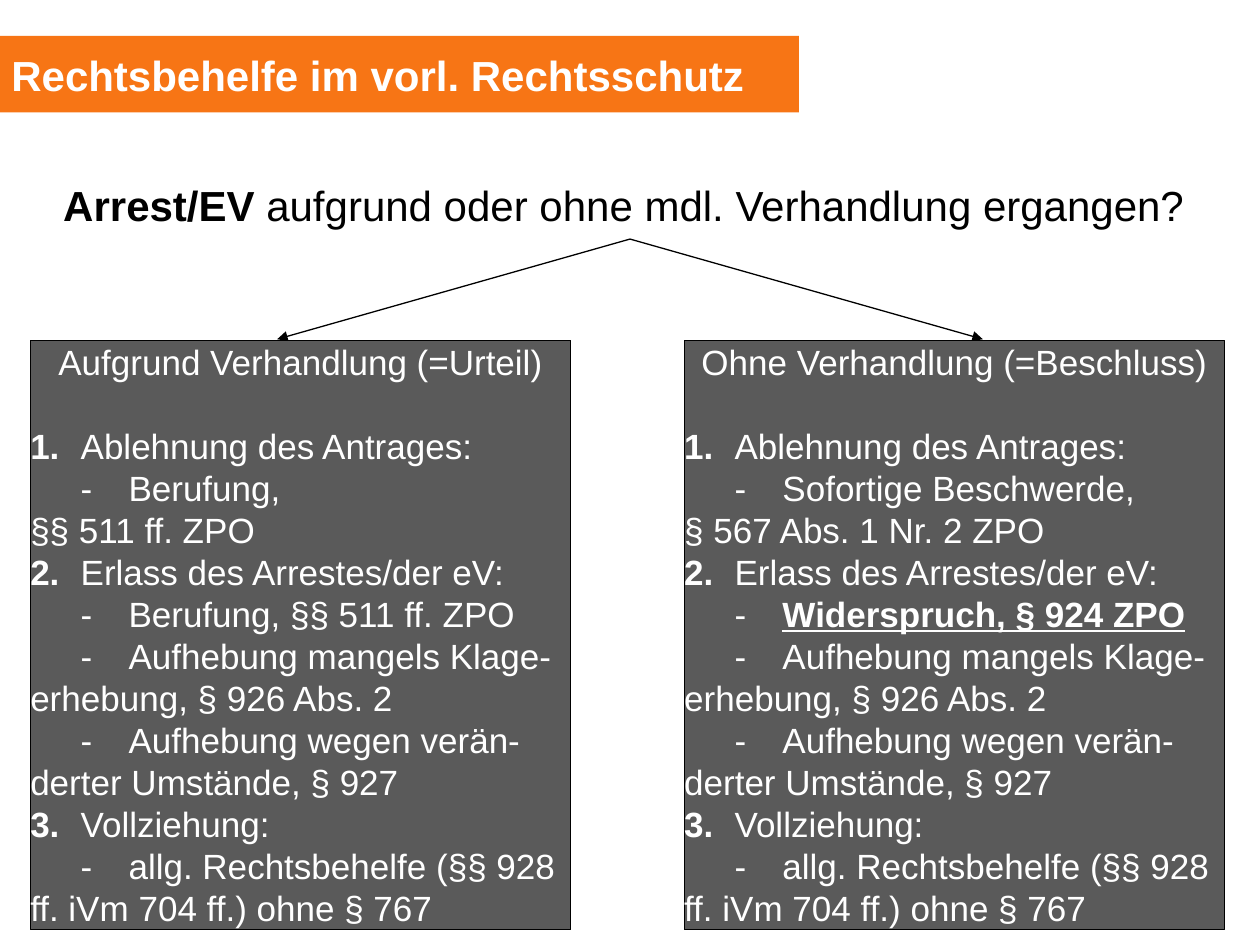
from lxml.etree import SubElement
from pptx import Presentation
from pptx.dml.color import RGBColor
from pptx.enum.shapes import MSO_CONNECTOR, MSO_SHAPE
from pptx.enum.text import MSO_ANCHOR, PP_ALIGN
from pptx.oxml.ns import qn
from pptx.util import Inches, Pt

HUES = {"ink": "000000", "paper": "FFFFFF", "panel": "5A5A5A", "bar": "F77515"}
WIDE, HIGH = 10, 7.5
TABS = (0.4, 0.78)


class Deck:
    font = "Arial"
    lead = 1.2  # line height as a multiple of the text size

    def __init__(self):
        self.prs = Presentation()
        self.prs.slide_width, self.prs.slide_height = Inches(WIDE), Inches(HIGH)
        self.slide = self.prs.slides.add_slide(self.prs.slide_layouts[6])

    def place(self, *shares):
        """Turn shares of the slide's size into lengths, x and y in turn."""
        return [Inches(s * (HIGH if i % 2 else WIDE)) for i, s in enumerate(shares)]

    def hue(self, name):
        return RGBColor.from_string(HUES[name])

    def fill_text(self, shape, paras, size, hue, align=PP_ALIGN.LEFT, inset=0):
        frame = shape.text_frame
        frame.word_wrap = True
        frame.margin_left = Inches(inset)
        frame.margin_top = frame.margin_right = frame.margin_bottom = 0
        for i, runs in enumerate(paras):
            para = frame.add_paragraph() if i else frame.paragraphs[0]
            para.alignment = align
            para.line_spacing = Pt(size * self.lead)
            for text, style in runs:
                for j, line in enumerate(text.split("\n")):
                    if j:
                        para.add_line_break()
                    run = para.add_run()
                    run.text = line
                    font = run.font
                    font.name, font.size = self.font, Pt(size)
                    font.color.rgb = self.hue(hue)
                    font.bold = "b" in style
                    font.underline = "u" in style
        return frame

    def label(self, at, runs, size):
        box = self.slide.shapes.add_textbox(*self.place(*at))
        self.fill_text(box, [runs], size, "ink", PP_ALIGN.CENTER)

    def block(self, at, fill, edge=None):
        box = self.slide.shapes.add_shape(MSO_SHAPE.RECTANGLE, *self.place(*at))
        box.shadow.inherit = False
        box.fill.solid()
        box.fill.fore_color.rgb = self.hue(fill)
        if edge:
            box.line.color.rgb = self.hue(edge)
            box.line.width = Pt(0.75)
        else:
            box.line.fill.background()
        return box

    def title(self, at, text):
        box = self.block(at, "bar")
        frame = self.fill_text(box, [[(text, "b")]], 24, "paper", inset=0.09)
        frame.vertical_anchor = MSO_ANCHOR.MIDDLE

    def panel(self, at, head, rows):
        box = self.block(at, "panel", "ink")
        frame = self.fill_text(box, [[(head, "")]] + rows, 20, "paper")
        frame.vertical_anchor = MSO_ANCHOR.TOP
        first, *rest = frame.paragraphs
        first.alignment = PP_ALIGN.CENTER
        first.space_after = Pt(20 * self.lead)
        for para in rest:
            stops = SubElement(para._p.get_or_add_pPr(), qn("a:tabLst"))
            for tab in TABS:
                SubElement(stops, qn("a:tab"), pos=str(Inches(tab)), algn="l")

    def arrow(self, *ends):
        line = self.slide.shapes.add_connector(
            MSO_CONNECTOR.STRAIGHT, *self.place(*ends))
        line.line.color.rgb = self.hue("ink")
        line.line.width = Pt(0.75)
        SubElement(line.line._get_or_add_ln(), qn("a:tailEnd"), type="triangle")
        SubElement(line._element.spPr, qn("a:effectLst"))


def point(num, text):
    return [(f"{num}.\t", "b"), (text, "")]


def dash(text, style=""):
    return [("\t-\t", ""), (text, style)]


def rows(appeal, remedy):
    """The list of remedies, which differs in two entries only."""
    return [
        point(1, "Ablehnung des Antrages:"),
        dash(appeal),
        point(2, "Erlass des Arrestes/der eV:"),
        remedy,
        dash("Aufhebung mangels Klage-\nerhebung, § 926 Abs. 2"),
        dash("Aufhebung wegen verän-\nderter Umstände, § 927"),
        point(3, "Vollziehung:"),
        dash("allg. Rechtsbehelfe (§§ 928\nff. iVm 704 ff.) ohne § 767"),
    ]


def main():
    deck = Deck()

    # Question
    deck.label((0.02, 0.19, 0.95, 0.05),
               [("Arrest/EV", "b"),
                (" aufgrund oder ohne mdl. Verhandlung ergangen?", "")], 24)

    # Branches and their panels
    sides = [
        (0.22, 0.024, "Aufgrund Verhandlung (=Urteil)",
         rows("Berufung,\n§§ 511 ff. ZPO", dash("Berufung, §§ 511 ff. ZPO"))),
        (0.78, 0.543, "Ohne Verhandlung (=Beschluss)",
         rows("Sofortige Beschwerde,\n§ 567 Abs. 1 Nr. 2 ZPO",
              dash("Widerspruch, § 924 ZPO", "bu"))),
    ]
    for tip, left, head, items in sides:
        deck.arrow(0.5, 0.253, tip, 0.359)
        deck.panel((left, 0.36, 0.429, 0.624), head, items)

    # Title bar
    deck.title((0, 0.038, 0.634, 0.081), "Rechtsbehelfe im vorl. Rechtsschutz")

    deck.prs.save("out.pptx")


if __name__ == "__main__":
    main()
